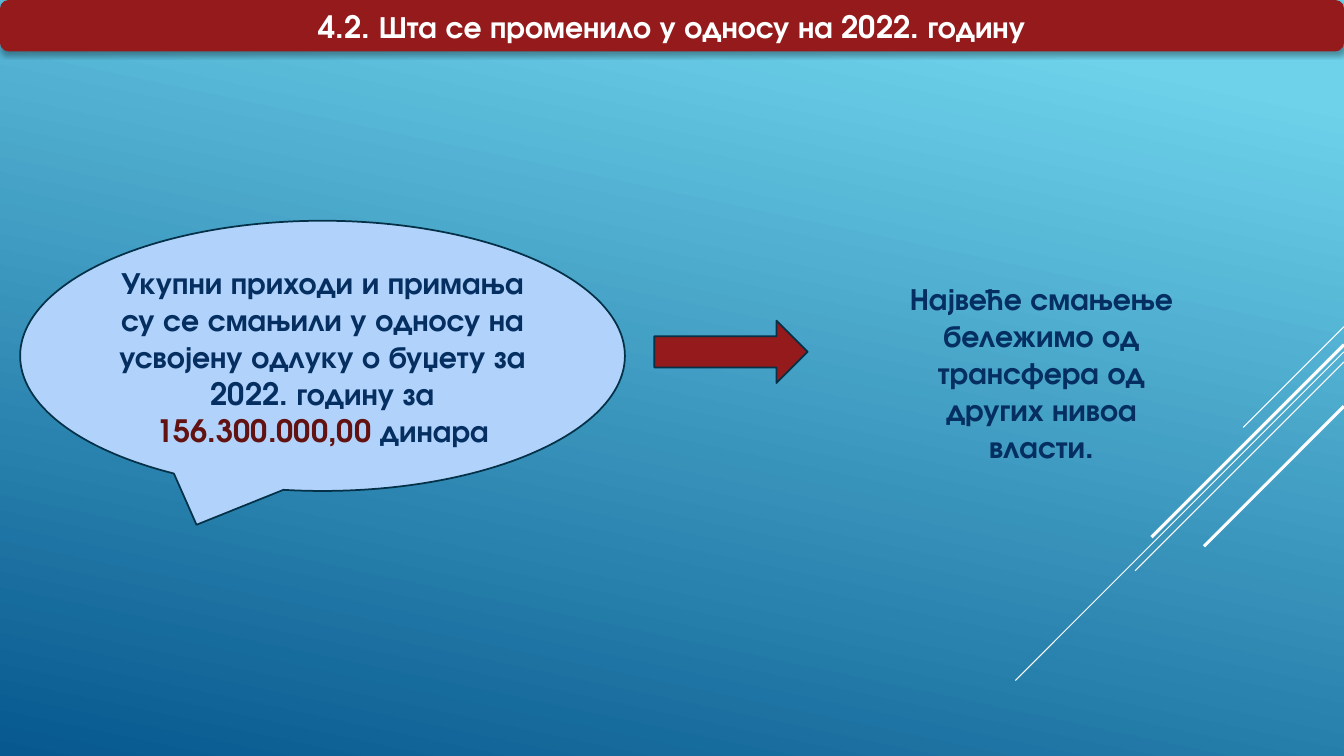
from lxml import etree
from pptx import Presentation
from pptx.dml import color
from pptx.enum import shapes, text
from pptx.oxml import ns
from pptx.util import Pt

WIDTH, HEIGHT = 960, 540
RED, NAVY, OUTLINE, WHITE = "941A1B", "052F61", "043148", "FFFFFF"
FONT = {"name": "TeX Gyre Adventor", "size": Pt(22), "bold": True}


def rgb(value):
    return color.RGBColor.from_string(value)


def add_effect(parent, tag, **attributes):
    return etree.SubElement(parent, ns.qn(tag), attributes)


def add_panel(slide, kind, box, fill=None, line=None):
    shape = slide.shapes.add_shape(kind, *map(Pt, box))
    shape.shadow.inherit = False
    if fill:
        shape.fill.solid()
        shape.fill.fore_color.rgb = rgb(fill)
    else:
        shape.fill.background()
    if line:
        shape.line.color.rgb = rgb(line)
        shape.line.width = Pt(1.25)
    else:
        shape.line.fill.background()
    return shape


def write(shape, *runs):
    frame = shape.text_frame
    frame.word_wrap = True
    frame.vertical_anchor = text.MSO_ANCHOR.MIDDLE
    paragraph = frame.paragraphs[0]
    paragraph.alignment = text.PP_ALIGN.CENTER
    for words, ink in runs:
        run = paragraph.add_run()
        run.text = words
        for key, value in FONT.items():
            setattr(run.font, key, value)
        run.font.color.rgb = rgb(ink)


def paint_background(slide):
    fill = slide.background.fill
    fill.gradient()
    fill.gradient_angle = 258
    for stop, (position, ink) in zip(fill.gradient_stops, [(0.1, "6ED2EB"), (1, "06588E")]):
        stop.position = position
        stop.color.rgb = rgb(ink)


def add_diagonals(slide, right):
    # Each line falls at 45 degrees from the right edge: top, run, weight
    for top, run, weight in [(233.3, 72, 0.75), (251.3, 234.7, 0.75), (258.5, 149.2, 0.75),
                             (246.2, 137.5, 2.25), (290.2, 100, 2.25)]:
        line = slide.shapes.add_connector(
            shapes.MSO_CONNECTOR.STRAIGHT, Pt(right), Pt(top), Pt(right - run), Pt(top + run))
        line.line.color.rgb = rgb(WHITE)
        line.line.width = Pt(weight)
        add_effect(line._element.spPr, "a:effectLst")


def add_title(slide, box):
    banner = add_panel(slide, shapes.MSO_SHAPE.ROUNDED_RECTANGLE, box, RED)
    effects = banner._element.spPr.find(ns.qn("a:effectLst"))
    shadow = add_effect(effects, "a:outerShdw", blurRad=str(Pt(3.5)), dist=str(Pt(2.2)),
                        dir="5400000", rotWithShape="0")
    ink = add_effect(shadow, "a:srgbClr", val="000000")
    add_effect(ink, "a:alpha", val="32000")
    write(banner, ("4.2. Шта се променило у односу на 2022. годину", WHITE))


def add_change(slide, box):
    left, top, width, height = box
    # Callout with the total
    callout = add_panel(slide, shapes.MSO_SHAPE.OVAL_CALLOUT,
                        (left, top + 7.2, 432, 193), "B1D3FB", OUTLINE)
    write(callout,
          ("Укупни приходи и примања су се смањили у односу на усвојену одлуку "
           "о буџету за 2022. годину за ", NAVY),
          ("156.300.000,00 ", "631212"),
          ("динара", NAVY))
    # Arrow to the explanation
    add_panel(slide, shapes.MSO_SHAPE.RIGHT_ARROW,
              (left + 453, top + 78.5, 109.5, 44.6), RED, OUTLINE)
    # Explanation
    reason = add_panel(slide, shapes.MSO_SHAPE.TEAR, (left + width - 291, top, 291, height))
    write(reason, ("Највеће смањење бележимо од трансфера од других нивоа власти.", NAVY))


def main():
    presentation = Presentation()
    presentation.slide_width, presentation.slide_height = Pt(WIDTH), Pt(HEIGHT)
    slide = presentation.slides.add_slide(presentation.slide_layouts[6])
    paint_background(slide)
    add_diagonals(slide, WIDTH)
    add_title(slide, (0, 0, WIDTH, 36.7))
    add_change(slide, (14.4, 150.5, 875, 231))
    presentation.save("out.pptx")


if __name__ == "__main__":
    main()
